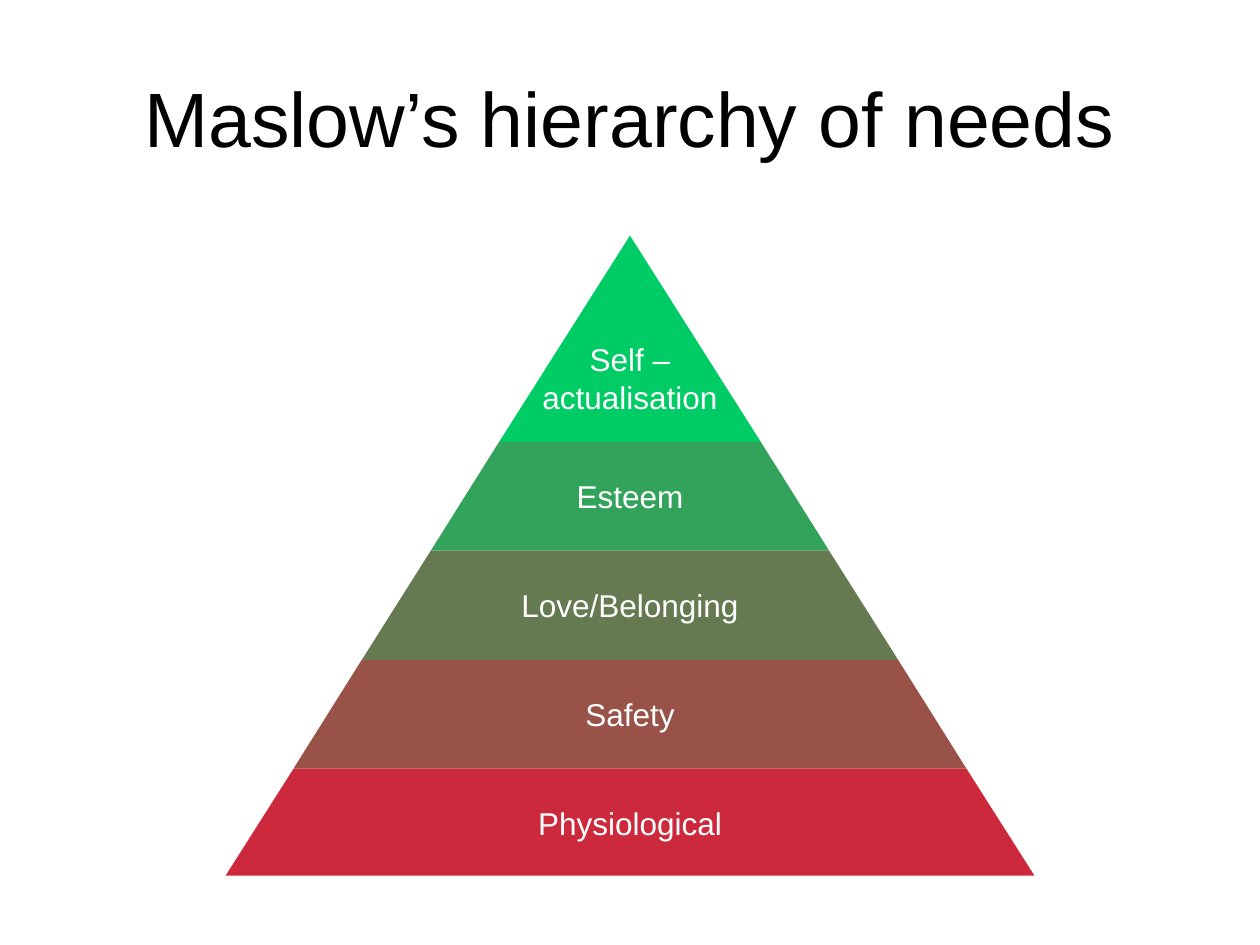
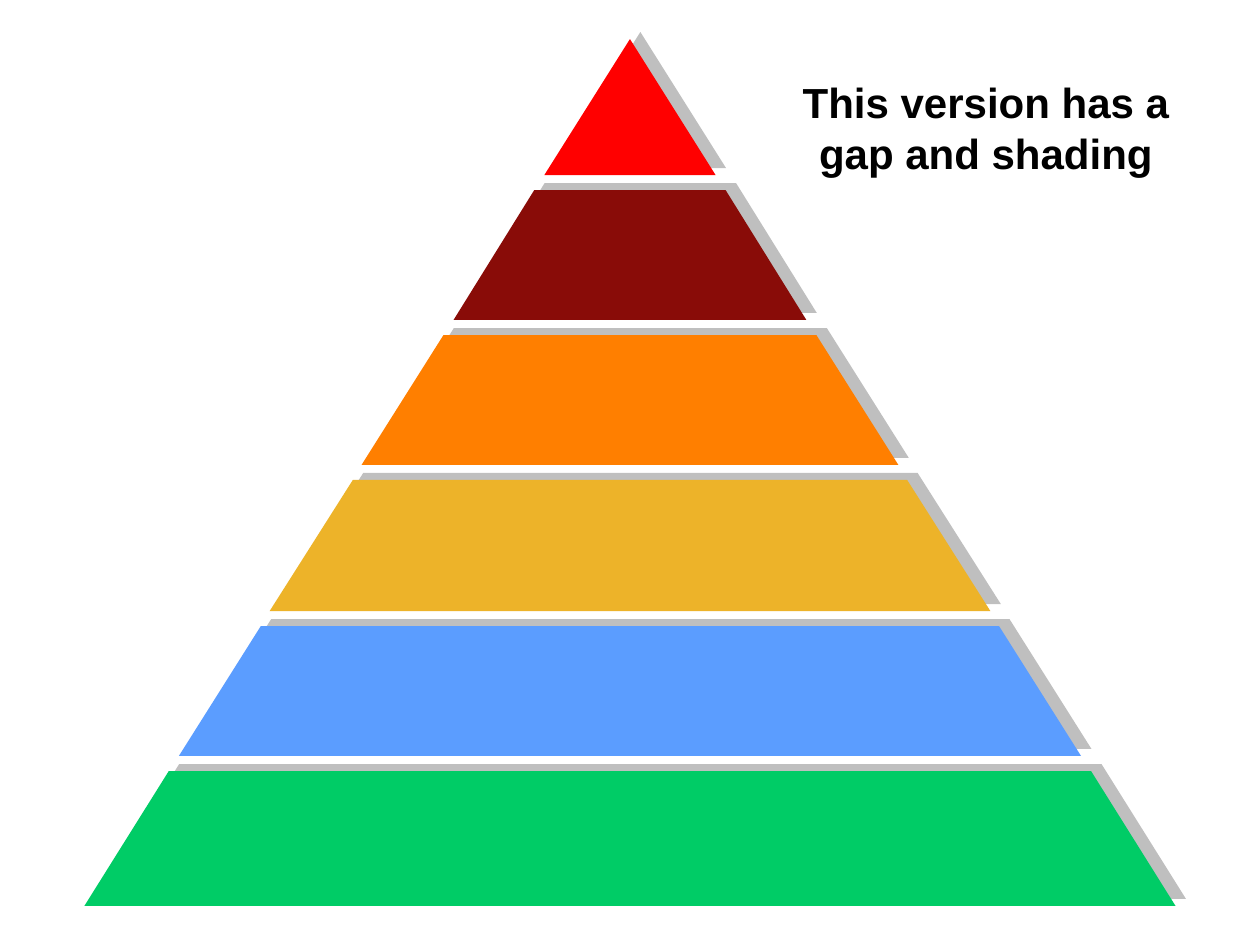
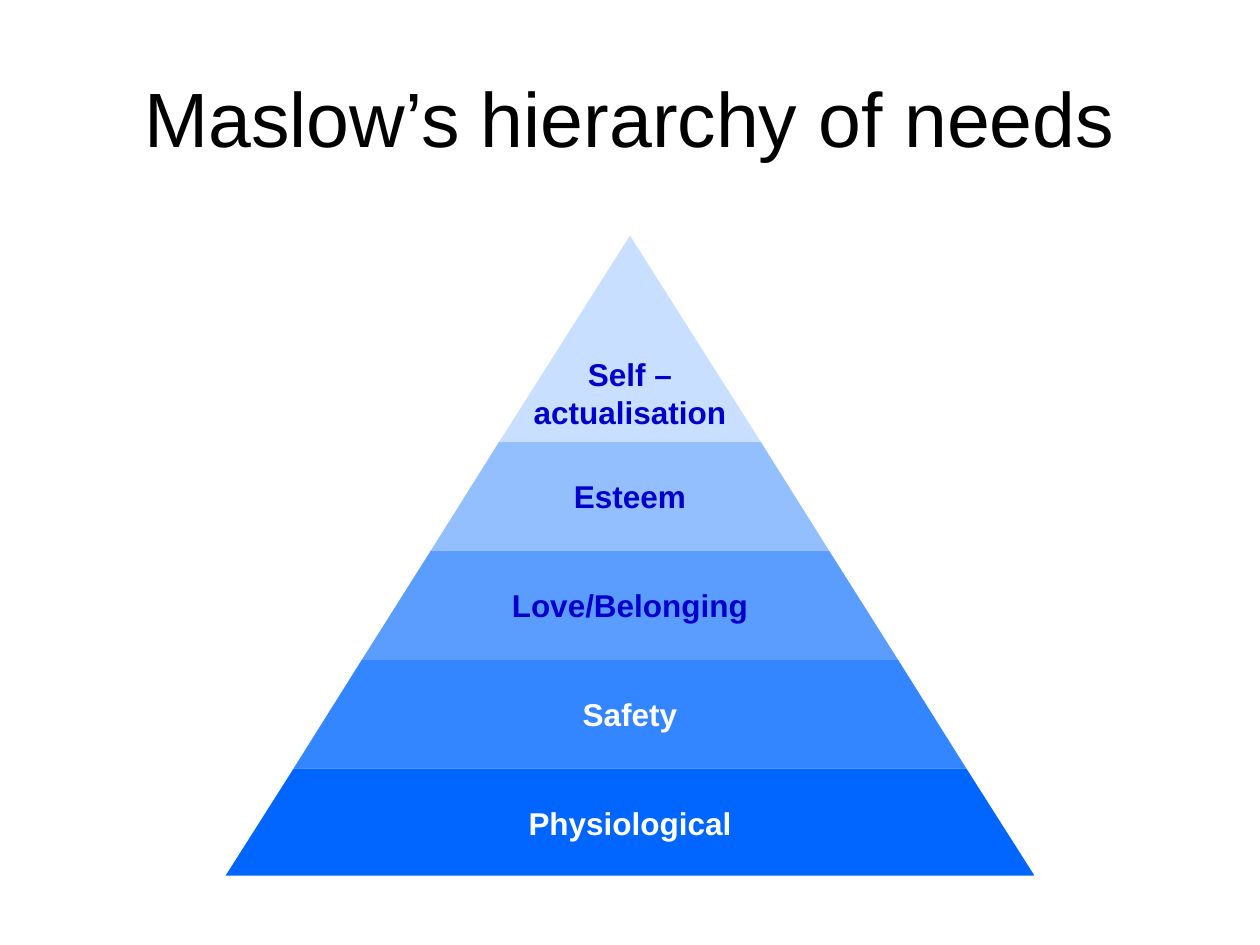
from dataclasses import dataclass

from lxml import etree
from pptx import Presentation
from pptx.dml.color import RGBColor
from pptx.enum.text import MSO_ANCHOR, MSO_AUTO_SIZE, PP_ALIGN
from pptx.oxml.ns import qn
from pptx.util import Pt

PX = 9144  # 100 px to the inch
SLIDE_WIDTH, SLIDE_HEIGHT = 1000, 750
CENTER_X = SLIDE_WIDTH // 2
BLANK_LAYOUT = 6
CENTER = PP_ALIGN.CENTER
MIDDLE, TOP = MSO_ANCHOR.MIDDLE, MSO_ANCHOR.TOP
FIT_SHAPE, NO_FIT = MSO_AUTO_SIZE.SHAPE_TO_FIT_TEXT, MSO_AUTO_SIZE.NONE

TITLE = "Maslow’s hierarchy of needs"
NEEDS = ("Self –\nactualisation", "Esteem", "Love/Belonging", "Safety", "Physiological")
LABEL_INSET = 23


@dataclass(frozen=True)
class Theme:
    font: str = "Arial"
    title_size: int = 44
    note_size: int = 24
    label_size: int = 18
    black: str = "000000"
    white: str = "FFFFFF"
    navy: str = "0000CC"
    shadow: str = "808080"
    green_to_red: tuple = ("00CC66", "33A35C", "667A52", "995247", "CC293D")
    blues: tuple = ("C9DFFF", "93BFFF", "5B9DFF", "3386FF", "0066FF")
    rainbow: tuple = ("FF0000", "890C08", "FF7F00", "EDB329", "5B9DFF", "00CC66")


@dataclass(frozen=True)
class Pyramid:
    apex: int
    base: int
    half_width: int
    first_cut: int
    pitch: float
    gap: int = 0

    def tiers(self, count):
        """Return the top and bottom of each tier, from the apex down."""
        cuts = [self.first_cut + round(self.pitch * i) for i in range(count - 1)]
        tops = [self.apex] + [cut + self.gap // 2 for cut in cuts]
        bottoms = [cut - self.gap // 2 for cut in cuts] + [self.base]
        return list(zip(tops, bottoms))

    def reach(self, y):
        """Return the distance from the centre line to the sloping side at y."""
        return round((y - self.apex) * self.half_width / (self.base - self.apex))


NEEDS_PYRAMID = Pyramid(apex=187, base=695, half_width=321, first_cut=351, pitch=86.4)
GAP_PYRAMID = Pyramid(apex=31, base=719, half_width=433, first_cut=145, pitch=115.25, gap=12)


class SlideBuilder:
    def __init__(self, deck, theme):
        self.deck = deck
        self.theme = theme
        self.slide = None

    def new_slide(self):
        self.slide = self.deck.slides.add_slide(self.deck.slide_layouts[BLANK_LAYOUT])

    def text(self, text, left, top, width, height, *, size, color, bold=False,
             wrap=True, anchor=TOP, fit=FIT_SHAPE):
        box = self.slide.shapes.add_textbox(*(v * PX for v in (left, top, width, height)))
        frame = box.text_frame
        frame.word_wrap = wrap
        frame.auto_size = fit
        frame.vertical_anchor = anchor
        frame.text = text
        for para in frame.paragraphs:
            para.alignment = CENTER
            for span in para.runs:
                span.font.name = self.theme.font
                span.font.size = Pt(size)
                span.font.bold = bold
                span.font.color.rgb = RGBColor.from_string(color)

    def title(self, text):
        self.text(text, 50, 30, 900, 125, size=self.theme.title_size,
                  color=self.theme.black, anchor=MIDDLE, fit=NO_FIT)

    def polygon(self, points, color, shadow=False):
        outline = self.slide.shapes.build_freeform(*points[0], scale=PX)
        outline.add_line_segments(points[1:], close=True)
        shape = outline.convert_to_shape()
        shape.fill.solid()
        shape.fill.fore_color.rgb = RGBColor.from_string(color)
        shape.line.fill.background()
        shape.shadow.inherit = False
        if shadow:
            self.cast_shadow(shape)

    def cast_shadow(self, shape):
        effects = shape.element.spPr.find(qn("a:effectLst"))
        outer = etree.SubElement(effects, qn("a:outerShdw"), blurRad="0", dist=str(Pt(7.2)),
                                 dir=str(326 * 60000), algn="ctr", rotWithShape="0")
        tint = etree.SubElement(outer, qn("a:srgbClr"), val=self.theme.shadow)
        etree.SubElement(tint, qn("a:alpha"), val="50000")

    def pyramid(self, pyramid, colors, shadow=False):
        for (top, bottom), color in zip(pyramid.tiers(len(colors)), colors):
            upper, lower = pyramid.reach(top), pyramid.reach(bottom)
            corners = [(CENTER_X + upper, top), (CENTER_X - upper, top),
                       (CENTER_X - lower, bottom), (CENTER_X + lower, bottom)]
            self.polygon(list(dict.fromkeys(corners)), color, shadow)

    def needs_slide(self, tier_colors, label_colors, label_widths, first_top, bold=False):
        self.new_slide()
        self.title(TITLE)
        self.pyramid(NEEDS_PYRAMID, tier_colors)
        tiers = NEEDS_PYRAMID.tiers(len(NEEDS))
        tops = [first_top] + [top + LABEL_INSET for top, _ in tiers[1:]]
        for need, top, width, color in zip(NEEDS, tops, label_widths, label_colors):
            height = 70 if "\n" in need else 40
            self.text(need, CENTER_X - width // 2, top, width, height, wrap=False,
                      size=self.theme.label_size, color=color, bold=bold)

    def gap_slide(self):
        self.new_slide()
        self.pyramid(GAP_PYRAMID, self.theme.rainbow, shadow=True)
        self.text("This version has a gap and shading", 613, 56, 339, 90,
                  size=self.theme.note_size, color=self.theme.black, bold=True)


def main():
    theme = Theme()
    deck = Presentation()
    deck.slide_width, deck.slide_height = SLIDE_WIDTH * PX, SLIDE_HEIGHT * PX
    builder = SlideBuilder(deck, theme)
    builder.needs_slide(theme.green_to_red, [theme.white] * 5,
                        (160, 106, 196, 92, 168), first_top=265)
    builder.gap_slide()
    builder.needs_slide(theme.blues, [theme.navy] * 3 + [theme.white] * 2,
                        (174, 110, 210, 96, 182), first_top=277, bold=True)
    deck.save("out.pptx")


if __name__ == "__main__":
    main()
